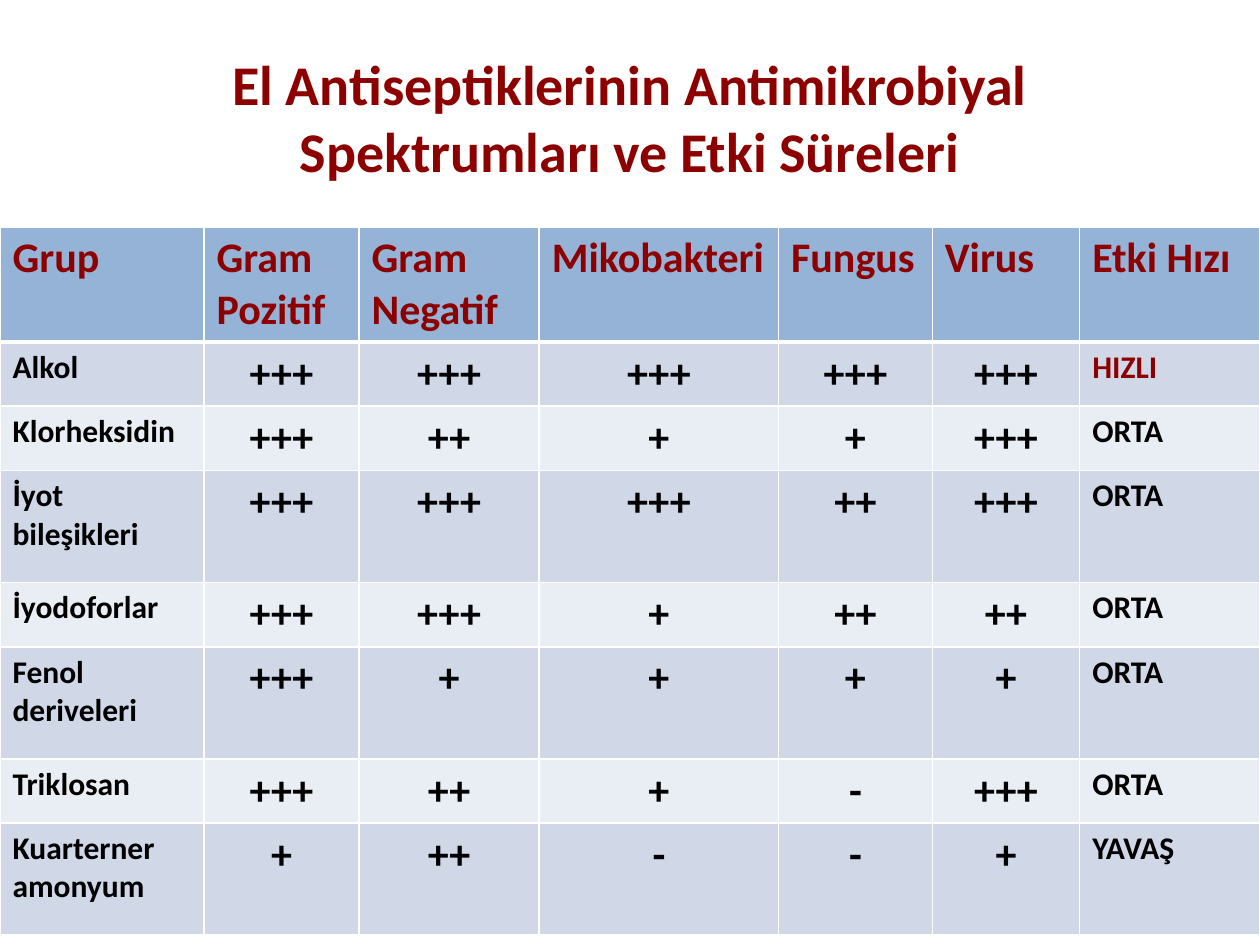
from lxml import etree
from pptx import Presentation
from pptx.dml.color import RGBColor
from pptx.enum.text import MSO_ANCHOR, PP_ALIGN
from pptx.oxml.ns import qn
from pptx.util import Inches, Pt

CENTER = PP_ALIGN.CENTER
LEFT = PP_ALIGN.LEFT
MIDDLE = MSO_ANCHOR.MIDDLE

DARK_RED = "8C0000"
BLACK = "000000"
WHITE = "FFFFFF"
HEADER_FILL = "95B3D7"
BAND_FILLS = ["D0D8E8", "E9EDF4"]

COLUMN_WIDTHS = [1.62, 1.23, 1.43, 1.9, 1.22, 1.17, 1.43]
TALL_ROW, SHORT_ROW = 0.89, 0.51

HEADINGS = ["Grup", "Gram Pozitif", "Gram Negatif", "Mikobakteri", "Fungus", "Virus", "Etki Hızı"]
ANTISEPTICS = [
    ["Alkol", "+++", "+++", "+++", "+++", "+++", "HIZLI"],
    ["Klorheksidin", "+++", "++", "+", "+", "+++", "ORTA"],
    ["İyot bileşikleri", "+++", "+++", "+++", "++", "+++", "ORTA"],
    ["İyodoforlar", "+++", "+++", "+", "++", "++", "ORTA"],
    ["Fenol deriveleri", "+++", "+", "+", "+", "+", "ORTA"],
    ["Triklosan", "+++", "++", "+", "-", "+++", "ORTA"],
    ["Kuarterner amonyum", "+", "++", "-", "-", "+", "YAVAŞ"],
]


def rgb(color):
    return RGBColor.from_string(color)


def write(text_frame, text, size, color, alignment):
    text_frame.text = text
    paragraph = text_frame.paragraphs[0]
    paragraph.alignment = alignment
    font = paragraph.font
    font.name = "Calibri"
    font.size = Pt(size)
    font.bold = True
    font.color.rgb = rgb(color)


def add_border(cell, side, width):
    properties = cell._tc.get_or_add_tcPr()
    line = etree.SubElement(properties, qn(f"a:ln{side}"), w=str(Pt(width)))
    fill = etree.SubElement(line, qn("a:solidFill"))
    etree.SubElement(fill, qn("a:srgbClr"), val=WHITE)


def style_cell(cell, fill, top=1, bottom=1):
    for side, width in {"L": 1, "R": 1, "T": top, "B": bottom}.items():
        add_border(cell, side, width)
    cell.fill.solid()
    cell.fill.fore_color.rgb = rgb(fill)


def add_title(slide):
    title = slide.shapes.title
    title.left, title.top = Inches(0.5), Inches(0.3)
    title.width, title.height = Inches(9), Inches(1.25)
    title.text_frame.word_wrap = True
    title.text_frame.vertical_anchor = MIDDLE
    write(title.text_frame, "El Antiseptiklerinin Antimikrobiyal Spektrumları ve Etki Süreleri",
          32, DARK_RED, CENTER)


def fill_header(table):
    table.rows[0].height = Inches(TALL_ROW)
    for cell, heading in zip(table.rows[0].cells, HEADINGS):
        write(cell.text_frame, heading, 24, DARK_RED, LEFT)
        style_cell(cell, HEADER_FILL, bottom=3)


def fill_antiseptic(table, number, values):
    row = table.rows[number]
    row.height = Inches(TALL_ROW if " " in values[0] else SHORT_ROW)
    for column, (cell, value) in enumerate(zip(row.cells, values)):
        is_rating = 0 < column < len(values) - 1
        color = DARK_RED if value == "HIZLI" else BLACK
        write(cell.text_frame, value, 24 if is_rating else 18, color, CENTER if is_rating else LEFT)
        style_cell(cell, BAND_FILLS[(number - 1) % 2], top=3 if number == 1 else 1)


def add_spectrum_table(slide):
    frame = slide.shapes.add_table(len(ANTISEPTICS) + 1, len(HEADINGS),
                                   Inches(0), Inches(1.8), Inches(10), Inches(5.62))
    table = frame.table
    for column, width in zip(table.columns, COLUMN_WIDTHS):
        column.width = Inches(width)
    fill_header(table)
    for number, values in enumerate(ANTISEPTICS, start=1):
        fill_antiseptic(table, number, values)


def main():
    presentation = Presentation()
    presentation.slide_width = Inches(10)
    presentation.slide_height = Inches(7.5)
    slide = presentation.slides.add_slide(presentation.slide_layouts[5])
    add_title(slide)
    add_spectrum_table(slide)
    presentation.save("out.pptx")


if __name__ == "__main__":
    main()
